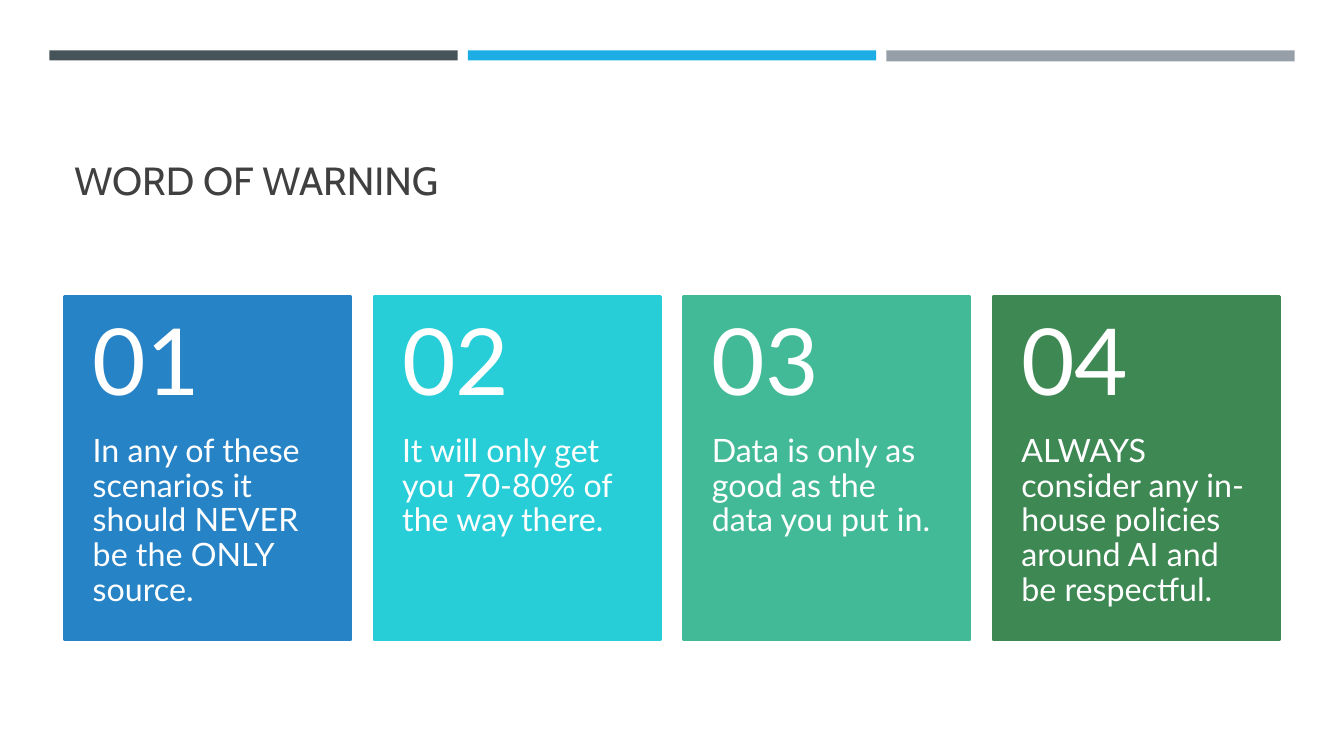
import pptx
import pptx.util
import pptx.dml.color
import pptx.enum.shapes
import pptx.enum.text

Inches = pptx.util.Inches
ANCHOR = pptx.enum.text.MSO_ANCHOR

# Content
TITLE = "WORD OF WARNING"
BARS = [("465359", 0.1), ("1CADE4", 0.1), ("969FA7", 0.11)]  # colour, height
CARDS = [
    ("2683C6", "In any of these scenarios it should NEVER be the ONLY source."),
    ("27CED7", "It will only get you 70-80% of the way there."),
    ("42BA97", "Data is only as good as the data you put in."),
    ("3E8853", "ALWAYS consider any in-house policies around AI and be respectful."),
]

# Layout in inches
BAR_LEFT, BAR_TOP, BAR_W, BAR_STEP = 0.49, 0.5, 4.05, 4.15
CARD_LEFT, CARD_TOP, CARD_W, CARD_H, CARD_STEP = 0.64, 2.94, 2.84, 3.41, 3.07
NUMBER_H, BODY_H = 1.37, 2.05

# Text formats
TITLE_FORMAT = {"size": 28, "name": "Cabin"}
NUMBER_FORMAT = {"size": 66, "name": "Lato"}
BODY_FORMAT = {"size": 23, "name": "Lato"}


def rgb(color):
    return pptx.dml.color.RGBColor.from_string(color)


def add_rect(s, box, color, line=None):
    sp = s.shapes.add_shape(pptx.enum.shapes.MSO_SHAPE.RECTANGLE,
                            *[Inches(v) for v in box])
    sp.shadow.inherit = False
    sp.fill.solid()
    sp.fill.fore_color.rgb = rgb(color)
    if line:
        sp.line.color.rgb = rgb(color)
        sp.line.width = pptx.util.Pt(line)
    else:
        sp.line.fill.background()


def add_text(s, box, text, font, color, anchor, insets, spacing=1.0):
    tf = s.shapes.add_textbox(*[Inches(v) for v in box]).text_frame
    tf.word_wrap = True
    tf.vertical_anchor = anchor
    for side, inset in zip(("left", "top", "right", "bottom"), insets):
        setattr(tf, "margin_" + side, Inches(inset))
    p = tf.paragraphs[0]
    p.line_spacing = spacing
    r = p.add_run()
    r.text = text
    for key, value in font.items():
        setattr(r.font, key, pptx.util.Pt(value) if key == "size" else value)
    r.font.color.rgb = rgb(color)


def main():
    prs = pptx.Presentation()
    prs.slide_width, prs.slide_height = Inches(13.33), Inches(7.5)
    s = prs.slides.add_slide(prs.slide_layouts[6])

    # Bars along the top
    for i, (color, height) in enumerate(BARS):
        add_rect(s, (BAR_LEFT + i * BAR_STEP, BAR_TOP, BAR_W, height), color)

    # Title
    add_text(s, (0.64, 0.77, 12.06, 1.3), TITLE, TITLE_FORMAT, "404040",
             ANCHOR.BOTTOM, (0.1, 0.05, 0.1, 0.05))

    # Numbered cards
    for i, (color, body) in enumerate(CARDS):
        left = CARD_LEFT + i * CARD_STEP
        add_rect(s, (left, CARD_TOP, CARD_W, CARD_H), color, line=1.75)
        add_text(s, (left, CARD_TOP + NUMBER_H, CARD_W, BODY_H), body, BODY_FORMAT,
                 "FFFFFF", ANCHOR.TOP, (0.28, 0, 0.28, 0.36), 0.9)
        add_text(s, (left, CARD_TOP, CARD_W, NUMBER_H), f"{i + 1:02d}", NUMBER_FORMAT,
                 "FFFFFF", ANCHOR.MIDDLE, (0.28, 0.18, 0.28, 0.18), 0.9)

    prs.save("out.pptx")


if __name__ == "__main__":
    main()
